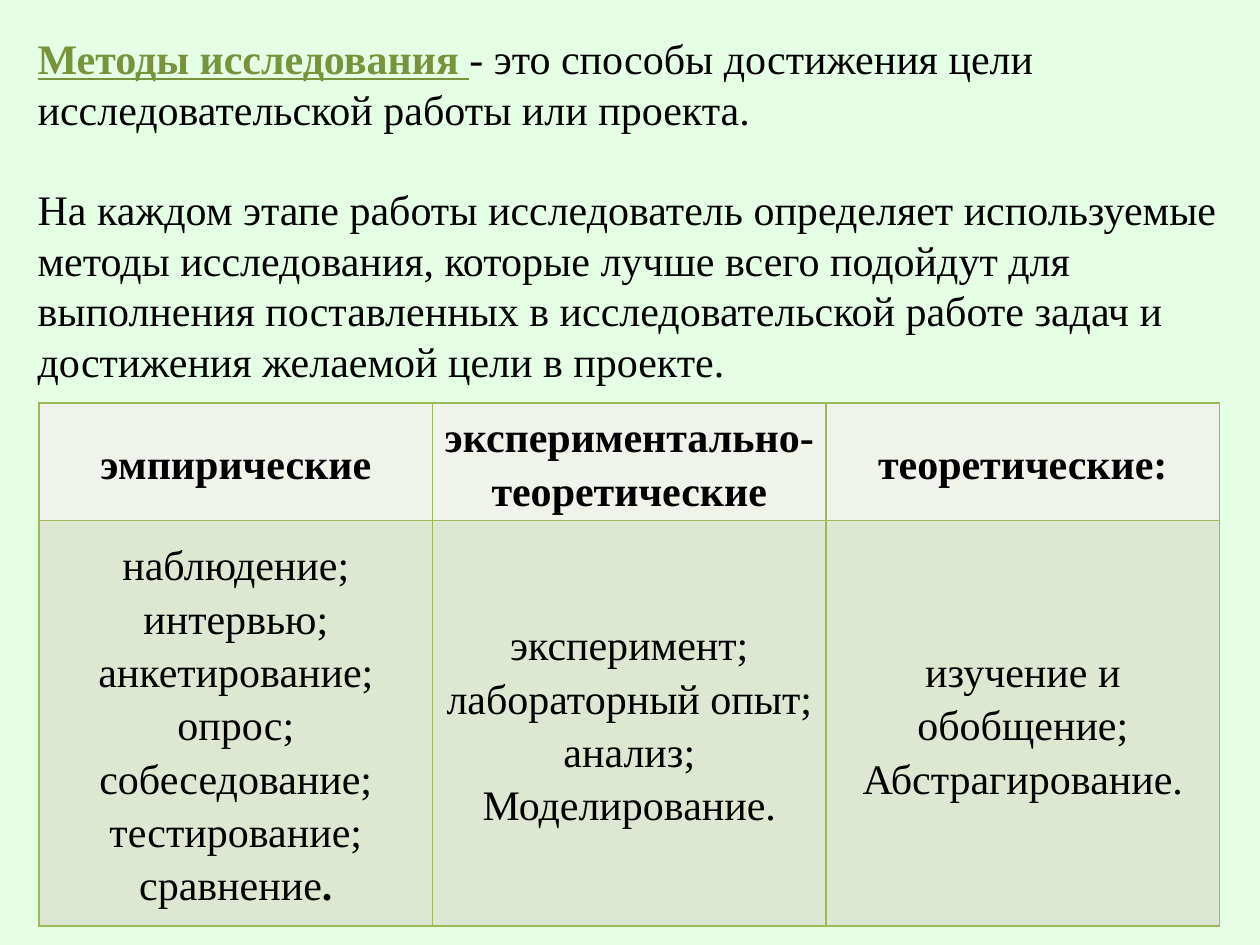
from lxml import etree
from pptx import Presentation
from pptx.dml.color import RGBColor
from pptx.enum.text import MSO_ANCHOR, MSO_AUTO_SIZE, PP_ALIGN
from pptx.oxml.ns import qn
from pptx.util import Inches, Pt

MIDDLE, CENTER, GROW = MSO_ANCHOR.MIDDLE, PP_ALIGN.CENTER, MSO_AUTO_SIZE.SHAPE_TO_FIT_TEXT
BLACK = RGBColor(0x00, 0x00, 0x00)
OLIVE = RGBColor(0x77, 0x93, 0x3C)
MINT = RGBColor(0xE5, 0xFF, 0xE5)
HEADER_FILL = RGBColor(0xEF, 0xF3, 0xEA)
BODY_FILL = RGBColor(0xDE, 0xE7, 0xD1)
BORDER = RGBColor(0x9B, 0xBB, 0x59)

FONT = {"name": "Times New Roman", "size": Pt(24)}
CELL = {"vertical_anchor": MIDDLE, "margin_left": Inches(0.07),
        "margin_right": Inches(0.07), "margin_top": 0, "margin_bottom": 0}

TERM = "Методы исследования "
DEFINITION = "- это способы достижения цели исследовательской работы или проекта."
EXPLANATION = ("На каждом этапе работы исследователь определяет используемые методы "
               "исследования, которые лучше всего подойдут для выполнения поставленных "
               "в исследовательской работе задач и достижения желаемой цели в проекте.")
METHODS = {
    "эмпирические": ["наблюдение;", "интервью;", "анкетирование;", "опрос;",
                     "собеседование;", "тестирование;", "сравнение."],
    "экспериментально-теоретические": ["эксперимент;", "лабораторный опыт;",
                                       "анализ;", "Моделирование."],
    "теоретические:": ["изучение и обобщение;", "Абстрагирование."],
}


def set_all(obj, values):
    for name, value in values.items():
        setattr(obj, name, value)


def add_run(p, text, color=BLACK, **font):
    r = p.add_run()
    r.text = text
    set_all(r.font, {**FONT, **font})
    r.font.color.rgb = color


def add_intro(slide):
    box = slide.shapes.add_textbox(Inches(0.2), Inches(0.21), Inches(9.61), Inches(3.53))
    tf = box.text_frame
    set_all(tf, {"word_wrap": True, "auto_size": GROW})
    p = tf.paragraphs[0]
    add_run(p, TERM, OLIVE, bold=True, underline=True)
    add_run(p, DEFINITION)
    p = tf.add_paragraph()
    p.space_before = Pt(28.8)
    add_run(p, EXPLANATION)
    for p in tf.paragraphs:
        p.line_spacing = Pt(28.8)


def add_borders(cell):
    tc_pr = cell._tc.get_or_add_tcPr()
    for i, side in enumerate(("lnL", "lnR", "lnT", "lnB")):
        ln = etree.Element(qn(f"a:{side}"), w=str(Pt(1)))
        fill = etree.SubElement(ln, qn("a:solidFill"))
        etree.SubElement(fill, qn("a:srgbClr"), val=str(BORDER))
        tc_pr.insert(i, ln)


def fill_cell(cell, lines, color, bold=False):
    set_all(cell, CELL)
    cell.fill.solid()
    cell.fill.fore_color.rgb = color
    add_borders(cell)
    tf = cell.text_frame
    for i, line in enumerate(lines):
        p = tf.add_paragraph() if i else tf.paragraphs[0]
        set_all(p, {"alignment": CENTER, "line_spacing": 1.15})
        if line == "сравнение.":
            add_run(p, line[:-1], bold=bold)
            add_run(p, line[-1], bold=True)
        else:
            add_run(p, line, bold=bold)


def add_methods_table(slide):
    frame = slide.shapes.add_table(2, len(METHODS), Inches(0.31), Inches(3.2),
                                   Inches(9.37), Inches(4.15))
    table = frame.table
    for row, height in zip(table.rows, (0.93, 3.22)):
        row.height = Inches(height)
    for col, (kind, methods) in enumerate(METHODS.items()):
        fill_cell(table.cell(0, col), [kind], HEADER_FILL, bold=True)
        fill_cell(table.cell(1, col), methods, BODY_FILL)


def main():
    prs = Presentation()
    set_all(prs, {"slide_width": Inches(10), "slide_height": Inches(7.5)})
    slide = prs.slides.add_slide(prs.slide_layouts[6])
    background = slide.background.fill
    background.solid()
    background.fore_color.rgb = MINT
    add_intro(slide)
    add_methods_table(slide)
    prs.save("out.pptx")


if __name__ == "__main__":
    main()
